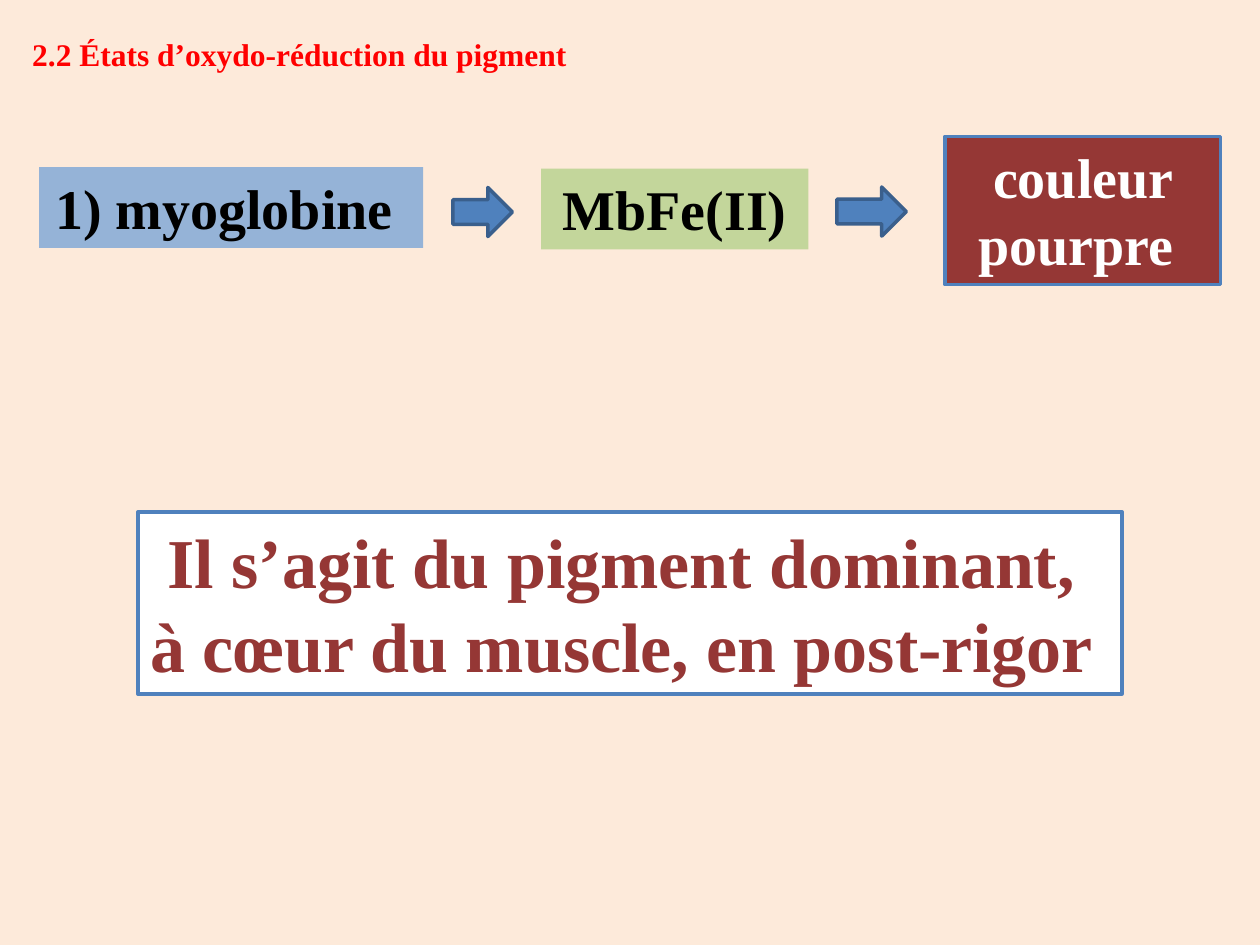
from pptx import Presentation, util as u
from pptx.dml.color import RGBColor
from pptx.enum import shapes, text

CREAM = RGBColor(0xFD, 0xEA, 0xDA)
RED = RGBColor(0xFF, 0x00, 0x00)
BLACK = RGBColor(0x00, 0x00, 0x00)
WHITE = RGBColor(0xFF, 0xFF, 0xFF)
SKY = RGBColor(0x95, 0xB3, 0xD7)
GREEN = RGBColor(0xC3, 0xD6, 0x9B)
PURPLE = RGBColor(0x95, 0x37, 0x35)
BLUE = RGBColor(0x4F, 0x81, 0xBD)
NAVY = RGBColor(0x3A, 0x5F, 0x8C)


class Page:
    font = "Times New Roman"
    edge = u.Pt(2)

    def __init__(self, deck):
        self.slide = deck.slides.add_slide(deck.slide_layouts[6])
        fill = self.slide.background.fill
        fill.solid()
        fill.fore_color.rgb = CREAM

    def label(self, shape, words, size, color, align, wrap=True):
        frame = shape.text_frame
        frame.word_wrap = wrap
        frame.auto_size = text.MSO_AUTO_SIZE.SHAPE_TO_FIT_TEXT
        frame.vertical_anchor = text.MSO_ANCHOR.TOP
        para = frame.paragraphs[0]
        para.text = words
        para.alignment = align
        font = para.font
        font.name, font.size, font.bold = self.font, u.Pt(size), True
        font.color.rgb = color

    def title(self, words, *area):
        box = self.slide.shapes.add_textbox(*map(u.Cm, area))
        self.label(box, words, 18, RED, text.PP_ALIGN.LEFT, wrap=False)

    def shape(self, kind, area, fill, line=None):
        item = self.slide.shapes.add_shape(kind, *map(u.Cm, area))
        item.shadow.inherit = False
        item.fill.solid()
        item.fill.fore_color.rgb = fill
        if line is None:
            item.line.fill.background()
        else:
            item.line.color.rgb = line
            item.line.width = self.edge
        return item

    def box(self, words, area, fill, color, line=None, size=32):
        item = self.shape(shapes.MSO_SHAPE.RECTANGLE, area, fill, line)
        self.label(item, words, size, color, text.PP_ALIGN.CENTER)

    def arrow(self, *area):
        self.shape(shapes.MSO_SHAPE.RIGHT_ARROW, area, BLUE, NAVY)


def main():
    deck = Presentation()
    deck.slide_width, deck.slide_height = u.Cm(25.4), u.Cm(19.05)
    page = Page(deck)

    # Heading
    page.title("2.2 États d’oxydo-réduction du pigment", 0.4, 0.58, 11.4, 1.02)

    # From pigment to colour
    page.box("1) myoglobine ", (0.79, 3.37, 7.74, 1.63), SKY, BLACK)
    page.arrow(9.13, 3.78, 1.2, 0.99)
    page.box("MbFe(II)", (10.91, 3.4, 5.39, 1.63), GREEN, BLACK)
    page.arrow(16.87, 3.77, 1.4, 0.99)
    page.box("couleur pourpre ", (19.05, 2.75, 5.56, 2.99), PURPLE, WHITE, BLUE)

    # Conclusion
    page.box("Il s’agit du pigment dominant,  à cœur du muscle, en post-rigor ",
             (2.78, 10.32, 19.84, 3.67), WHITE, PURPLE, BLUE, size=40)

    deck.save("out.pptx")


if __name__ == "__main__":
    main()
